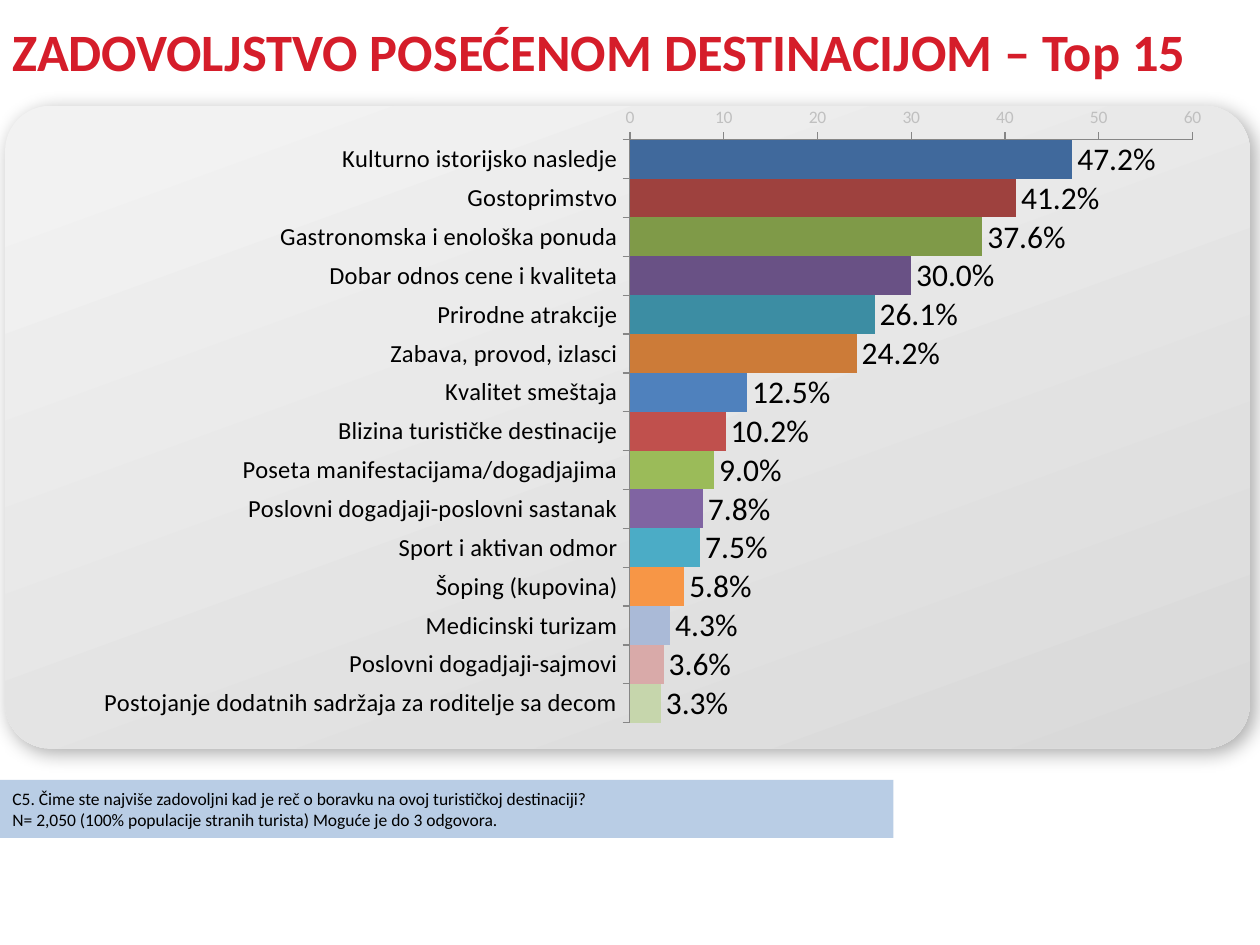
from lxml import etree
from pptx import Presentation
from pptx.chart.data import CategoryChartData as ChartData
from pptx.dml.color import RGBColor as RGB
from pptx.enum.chart import XL_CHART_TYPE as Kind, XL_LABEL_POSITION as Place
from pptx.enum.chart import XL_TICK_MARK as Tick
from pptx.enum.shapes import MSO_SHAPE as Shape
from pptx.enum.text import MSO_ANCHOR as Anchor, PP_ALIGN as Align
from pptx.oxml import parse_xml
from pptx.oxml.ns import nsdecls, qn
from pptx.util import Inches, Pt

BLACK = RGB(0x00, 0x00, 0x00)
RED = RGB(0xD5, 0x1D, 0x2A)
BLUE = RGB(0xB9, 0xCD, 0xE5)
PALE = RGB(0xF2, 0xF2, 0xF2)
GREY = RGB(0xD9, 0xD9, 0xD9)
SILVER = RGB(0xC0, 0xC0, 0xC0)
AXIS = RGB(0x86, 0x86, 0x86)
BARS = [RGB.from_string(c) for c in (
    "40699C 9E413E 7F9A48 695185 3C8DA3 CC7B38 "
    "4F81BD C0504D 9BBB59 8064A2 4BACC6 F79646 "
    "AABAD7 D9AAA9 C6D6AC").split()]

DATA = [
    ("Kulturno istorijsko nasledje", 47.2),
    ("Gostoprimstvo", 41.2),
    ("Gastronomska i enološka ponuda", 37.6),
    ("Dobar odnos cene i kvaliteta", 30),
    ("Prirodne atrakcije", 26.1),
    ("Zabava, provod, izlasci", 24.2),
    ("Kvalitet smeštaja", 12.5),
    ("Blizina turističke destinacije", 10.2),
    ("Poseta manifestacijama/dogadjajima", 9),
    ("Poslovni dogadjaji-poslovni sastanak", 7.8),
    ("Sport i aktivan odmor", 7.5),
    ("Šoping (kupovina)", 5.8),
    ("Medicinski turizam", 4.3),
    ("Poslovni dogadjaji-sajmovi", 3.6),
    ("Postojanje dodatnih sadržaja za roditelje sa decom", 3.3),
]


class Page:
    face = "Calibri"

    def __init__(self, slide):
        self.slide = slide

    def font(self, font, size, color=BLACK, bold=False):
        font.name, font.size, font.bold = self.face, Pt(size), bold
        font.color.rgb = color

    def label(self, shape, lines, size, color=BLACK, bold=False):
        frame = shape.text_frame
        frame.word_wrap = True
        frame.vertical_anchor = Anchor.MIDDLE
        frame.text = "\n".join(lines)
        for para in frame.paragraphs:
            para.alignment = Align.LEFT
            for run in para.runs:
                self.font(run.font, size, color, bold)

    def title(self, box, text):
        shape = self.slide.shapes.add_textbox(*map(Inches, box))
        self.label(shape, [text], 30, RED, True)

    def note(self, box, lines):
        shape = self.slide.shapes.add_shape(Shape.RECTANGLE, *map(Inches, box))
        shape.shadow.inherit = False
        shape.fill.solid()
        shape.fill.fore_color.rgb = BLUE
        shape.line.fill.background()
        self.label(shape, lines, 10)

    def panel(self, box):
        shape = self.slide.shapes.add_shape(
            Shape.ROUNDED_RECTANGLE, *map(Inches, box))
        shape.adjustments[0] = 0.07
        shape.line.fill.background()
        fill = shape.fill
        fill.gradient()
        fill.gradient_angle = 290
        for stop, spot, color in zip(
                fill.gradient_stops, (0.05, 1), (PALE, GREY)):
            stop.position, stop.color.rgb = spot, color
        # Soft shadow to the lower right
        shape.shadow.inherit = False
        effects = shape._element.spPr.find(qn("a:effectLst"))
        effects.append(parse_xml(
            f'<a:outerShdw {nsdecls("a")} blurRad="{Pt(11)}" dist="{Pt(4)}" '
            'dir="2700000" algn="tl" rotWithShape="0"><a:srgbClr val="000000">'
            '<a:alpha val="32000"/></a:srgbClr></a:outerShdw>'))

    def axis(self, axis, size, color):
        axis.has_major_gridlines = False
        axis.major_tick_mark = Tick.OUTSIDE
        axis.minor_tick_mark = Tick.NONE
        axis.format.line.color.rgb = AXIS
        self.font(axis.tick_labels.font, size, color)

    def layout(self, chart, spots):
        area = chart._chartSpace.chart.plotArea
        for old in area.findall(qn("c:layout")):
            area.remove(old)
        node = etree.Element(qn("c:layout"))
        manual = etree.SubElement(node, qn("c:manualLayout"))
        rows = [("layoutTarget", "inner"), ("xMode", "edge"),
                ("yMode", "edge"), *zip("xywh", spots)]
        for tag, val in rows:
            etree.SubElement(manual, qn(f"c:{tag}"), val=str(val))
        area.insert(0, node)

    def bars(self, box, data):
        feed = ChartData()
        feed.categories = [name for name, _ in data]
        feed.add_series("Series 1", [val for _, val in data])
        chart = self.slide.shapes.add_chart(
            Kind.BAR_CLUSTERED, *map(Inches, box), feed).chart
        chart.has_legend = chart.has_title = False
        self.font(chart.font, 18)
        self.layout(chart, (0.5, 0.07, 0.48, 0.9))

        # Axes
        self.axis(chart.category_axis, 14, BLACK)
        chart.category_axis.reverse_order = True
        scale = chart.value_axis
        self.axis(scale, 10, SILVER)
        scale.minimum_scale, scale.maximum_scale = 0, 60
        scale.major_unit = 10

        # Bars and labels
        plot = chart.plots[0]
        plot.gap_width = 0
        plot.vary_by_categories = False
        series = plot.series[0]
        for i, color in enumerate(BARS):
            fill = series.points[i].format.fill
            fill.solid()
            fill.fore_color.rgb = color
        tags = series.data_labels
        tags.show_value = True
        tags.number_format = '#,##0.0"%"'
        tags.number_format_is_linked = False
        tags.position = Place.OUTSIDE_END
        self.font(tags.font, 18)


def main():
    deck = Presentation()
    deck.slide_width, deck.slide_height = Inches(10), Inches(7.5)
    page = Page(deck.slides.add_slide(deck.slide_layouts[6]))

    # Chart on its panel
    page.panel((0.04, 0.84, 9.88, 5.1))
    page.bars((0.35, 0.75, 9.3, 5.14), DATA)

    # Survey question
    page.note((0, 6.19, 7.09, 0.46), [
        "C5. Čime ste najviše zadovoljni kad je reč o boravku na ovoj "
        "turističkoj destinaciji?",
        "N= 2,050 (100% populacije stranih turista) Moguće je do 3 odgovora."])

    # Heading
    page.title((0, -0.11, 10, 1.02),
               "ZADOVOLJSTVO POSEĆENOM DESTINACIJOM – Top 15")
    deck.save("out.pptx")


if __name__ == "__main__":
    main()
